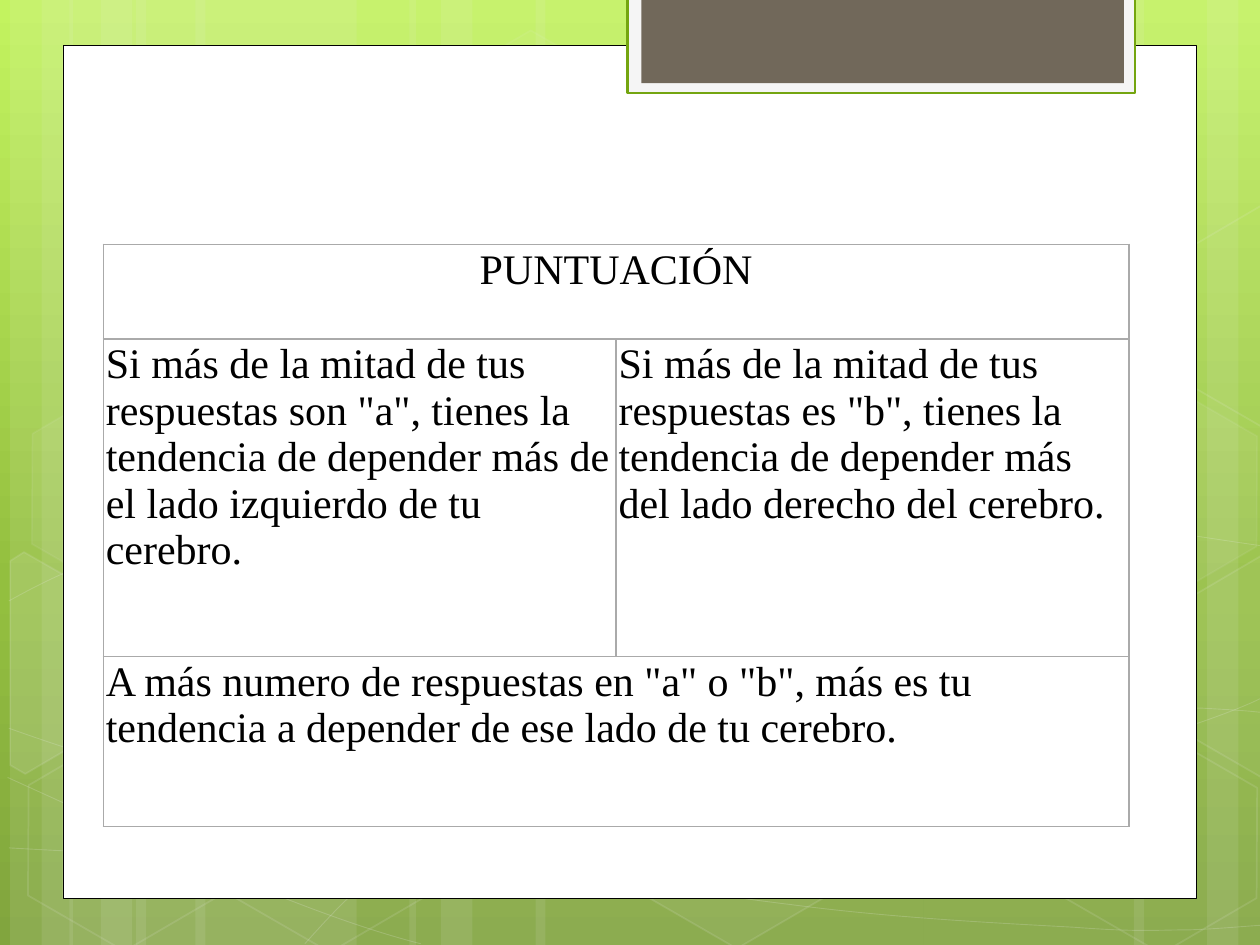
from copy import deepcopy
from dataclasses import dataclass
from math import cos, radians, sin

from lxml.etree import SubElement
from pptx import Presentation
from pptx.dml.color import RGBColor as Rgb
from pptx.enum.shapes import MSO_SHAPE as Preset
from pptx.enum.text import PP_ALIGN as Align
from pptx.oxml.ns import qn
from pptx.util import Inches, Pt

COLUMNS, ROWS = 10, 7.5
TILT = 30


@dataclass(frozen=True)
class Theme:
    sky: tuple = ((0, "C3F35F"), (0.62, "93BF3F"), (1, "81A53E"))
    veil: str = "EFEFEF"
    panel: str = "FFFFFF"
    ink: str = "000000"
    tab: str = "71685A"
    tab_frame: str = "F5F5F5"
    tab_edge: str = "74A510"
    grid: str = "AAAAAA"
    font: str = "Times New Roman"
    size: float = 24
    paragraph_gap: float = 6.8


THEME = Theme()

STRIPES = [
    (1.08, 1.75), (0.08, 0.5), (0.33, 0.83), (1.55, 1.75), (0.55, 0.5), (0.8, 0.83),
    (7.33, 1.75), (9.58, 0.5), (9, 0.83), (4.25, 3.08), (3.25, 0.5), (3.5, 0.83),
]

WAVES = [
    [(0.07, 6.73), (0.61, 6.76, 1.15, 6.79, 1.9, 6.78), (2.65, 6.77, 3.58, 6.75, 4.58, 6.65),
     (5.58, 6.55, 7, 6.36, 7.92, 6.17), (8.83, 5.98, 9.77, 5.68, 10.07, 5.51)],
    [(0.07, 4.77), (0.36, 4.61, 0.65, 4.46, 1.21, 4.31), (1.78, 4.16, 2.59, 3.94, 3.47, 3.87),
     (4.36, 3.8, 5.44, 3.79, 6.54, 3.87), (7.64, 3.95, 9.47, 4.26, 10.07, 4.34)],
    [(0.06, 6.17), (1.27, 6.72, 2.47, 7.27, 3.34, 7.49)],
    [(0.07, 5.78), (0.38, 5.89, 0.7, 6, 1.28, 6.16), (1.86, 6.31, 2.73, 6.56, 3.57, 6.73),
     (4.4, 6.9, 5.45, 7.08, 6.28, 7.18), (7.11, 7.29, 8, 7.33, 8.53, 7.36),
     (9.05, 7.4, 9.19, 7.38, 9.45, 7.38), (9.71, 7.37, 9.89, 7.35, 10.07, 7.34)],
    [(2.42, 7.49), (2.6, 7.29, 2.78, 7.09, 3.02, 6.91), (3.26, 6.73, 3.6, 6.53, 3.88, 6.39),
     (4.16, 6.25, 4.33, 6.19, 4.7, 6.09), (5.06, 5.99, 5.73, 5.85, 6.08, 5.78),
     (6.44, 5.71, 6.49, 5.71, 6.8, 5.69), (7.11, 5.66, 7.6, 5.63, 7.94, 5.62),
     (8.29, 5.61, 8.86, 5.62, 8.86, 5.62), (9.53, 5.62),
     (9.71, 5.63, 9.88, 5.64, 9.97, 5.65), (10.06, 5.66, 10.03, 5.65, 10.06, 5.66)],
]

HEXAGONS = [
    (3.34, 0.36, 4, 8), (4.97, 5.89, 6, 12), (0.11, 5.91, 0, 12), (0.14, 3.12, 7, 8),
    (1.74, 5.92, 0, 12), (7.53, 4.53, 10, 12), (8.34, 5.93, 0, 12), (8.34, 3.14, 7, 8),
]

CUT_HEXAGONS = [
    ((0.36, 5.35), 10,
     [(0.08, 4.45), (0.19, 4.38), (0.96, 4.82), (0.95, 5.7), (0.2, 6.14), (0.08, 6.07)]),
    ((9.85, 5.2), 4,
     [(9.26, 4.85), (10.01, 4.41), (10.09, 4.46), (10.09, 6.13), (10.02, 6.17), (9.26, 5.73)]),
    ((9.85, 2.41), 0,
     [(9.26, 2.07), (10.01, 1.63), (10.1, 1.68), (10.09, 3.35), (10.02, 3.39), (9.26, 2.95)]),
]

HEADING = "PUNTUACIÓN"
LEFT_SIDE = ('Si más de la mitad de tus respuestas son "a", tienes la tendencia '
             'de depender más de el lado izquierdo de tu cerebro.')
RIGHT_SIDE = ('Si más de la mitad de tus respuestas es "b", tienes la tendencia '
              'de depender más del lado derecho del cerebro.')
CONCLUSION = ('A más numero de respuestas en "a" o "b", más es tu tendencia '
              'a depender de ese lado de tu cerebro.')


def tint(fill, color, opacity=100):
    if not opacity:
        fill.background()
        return
    fill.solid()
    fill.fore_color.rgb = Rgb.from_string(color)
    if opacity < 100:
        srgb = fill._xPr.find(".//" + qn("a:srgbClr"))
        SubElement(srgb, qn("a:alpha"), val=str(opacity * 1000))


def paint(shape, color, opacity=100, edge=None, weight=1, edge_opacity=100):
    shape.shadow.inherit = False
    tint(shape.fill, color, opacity)
    if edge:
        tint(shape.line.fill, edge, edge_opacity)
        shape.line.width = Pt(weight)
    else:
        shape.line.fill.background()


def add_box(slide, left, top, width, height, preset=Preset.RECTANGLE):
    return slide.shapes.add_shape(preset, *map(Inches, (left, top, width, height)))


def add_outline(slide, points, close):
    start, *rest = [tuple(map(Inches, point)) for point in points]
    builder = slide.shapes.build_freeform(*start)
    builder.add_line_segments(rest, close=close)
    return builder.convert_to_shape()


def add_wave(slide, segments):
    wave = add_outline(slide, [segment[-2:] for segment in segments], False)
    sides = list(wave._element.iter(qn("a:lnTo")))
    for side, segment in zip(sides, segments[1:]):
        if len(segment) == 2:
            continue
        side.tag = qn("a:cubicBezTo")
        handles = (segment[:2], segment[2:4])
        for index, (x, y) in enumerate(handles):
            handle = deepcopy(side[-1])
            handle.set("x", str(Inches(x) - wave.left))
            handle.set("y", str(Inches(y) - wave.top))
            side.insert(index, handle)
    return wave


def turn_back(point, center):
    dx, dy = point[0] - center[0], point[1] - center[1]
    c, s = cos(radians(TILT)), sin(radians(TILT))
    return center[0] + dx * c + dy * s, center[1] - dx * s + dy * c


def set_sky(slide):
    fill = slide.background.fill
    fill.gradient()
    fill.gradient_angle = 270
    stop_list = next(slide._element.iter(qn("a:gsLst")))
    stop_list.insert(1, deepcopy(stop_list[0]))
    for stop, (position, color) in zip(fill.gradient_stops, THEME.sky):
        stop.position = position
        stop.color.rgb = Rgb.from_string(color)


def add_backdrop(slide):
    veil = THEME.veil
    for left, width in STRIPES:
        paint(add_box(slide, left, 0, width, ROWS), veil, 10)
    for segments in WAVES:
        paint(add_wave(slide, segments), veil, 0, veil, 0.5, 20)
    for left, top, opacity, edge_opacity in HEXAGONS:
        hexagon = add_box(slide, left, top, 1.75, 1.52, Preset.HEXAGON)
        hexagon.adjustments[0] = 0.285
        hexagon.rotation = TILT
        paint(hexagon, veil, opacity, veil, 1, edge_opacity)
    for center, opacity, corners in CUT_HEXAGONS:
        upright = [turn_back(corner, center) for corner in corners]
        cut_hexagon = add_outline(slide, upright, True)
        cut_hexagon.rotation = TILT
        paint(cut_hexagon, veil, opacity, veil, 1, 12)


def add_panel(slide):
    paint(add_box(slide, 0.5, 0.36, COLUMNS - 1, 6.77), THEME.panel, edge=THEME.ink, weight=0.5)
    paint(add_box(slide, 4.98, -0.02, 4.03, 0.76), THEME.tab_frame,
          edge=THEME.tab_edge, weight=1.25)
    paint(add_box(slide, 5.09, -0.02, 3.83, 0.68), THEME.tab)


def style_cell(cell):
    cell.margin_left = cell.margin_right = cell.margin_top = cell.margin_bottom = Inches(0.02)
    properties = cell._tc.get_or_add_tcPr()
    for side in ("lnL", "lnR", "lnT", "lnB"):
        border = SubElement(properties, qn("a:" + side), w=str(Pt(1)))
        SubElement(SubElement(border, qn("a:solidFill")), qn("a:srgbClr"), val=THEME.grid)
    cell.fill.background()


def write(cell, text, align=Align.LEFT):
    paragraph = cell.text_frame.paragraphs[0]
    paragraph.text = text
    paragraph.alignment = align
    paragraph.space_before = paragraph.space_after = Pt(THEME.paragraph_gap)
    for run in paragraph.runs:
        run.font.name = THEME.font
        run.font.size = Pt(THEME.size)
        run.font.color.rgb = Rgb.from_string(THEME.ink)


def add_scoring(slide):
    heights = (0.75, 2.52, 1.35)
    area = map(Inches, (0.82, 1.94, 8.14, sum(heights)))
    scoring = slide.shapes.add_table(len(heights), 2, *area).table
    scoring.first_row = scoring.horz_banding = False
    for row, height in zip(scoring.rows, heights):
        row.height = Inches(height)
    for cell in scoring.iter_cells():
        style_cell(cell)
    for row in (0, 2):
        scoring.cell(row, 0).merge(scoring.cell(row, 1))
    write(scoring.cell(0, 0), HEADING, Align.CENTER)
    write(scoring.cell(1, 0), LEFT_SIDE)
    write(scoring.cell(1, 1), RIGHT_SIDE)
    write(scoring.cell(2, 0), CONCLUSION)


def main():
    deck = Presentation()
    deck.slide_width, deck.slide_height = Inches(COLUMNS), Inches(ROWS)
    slide = deck.slides.add_slide(deck.slide_layouts[6])
    set_sky(slide)
    add_backdrop(slide)
    add_panel(slide)
    add_scoring(slide)
    deck.save("out.pptx")


if __name__ == "__main__":
    main()
